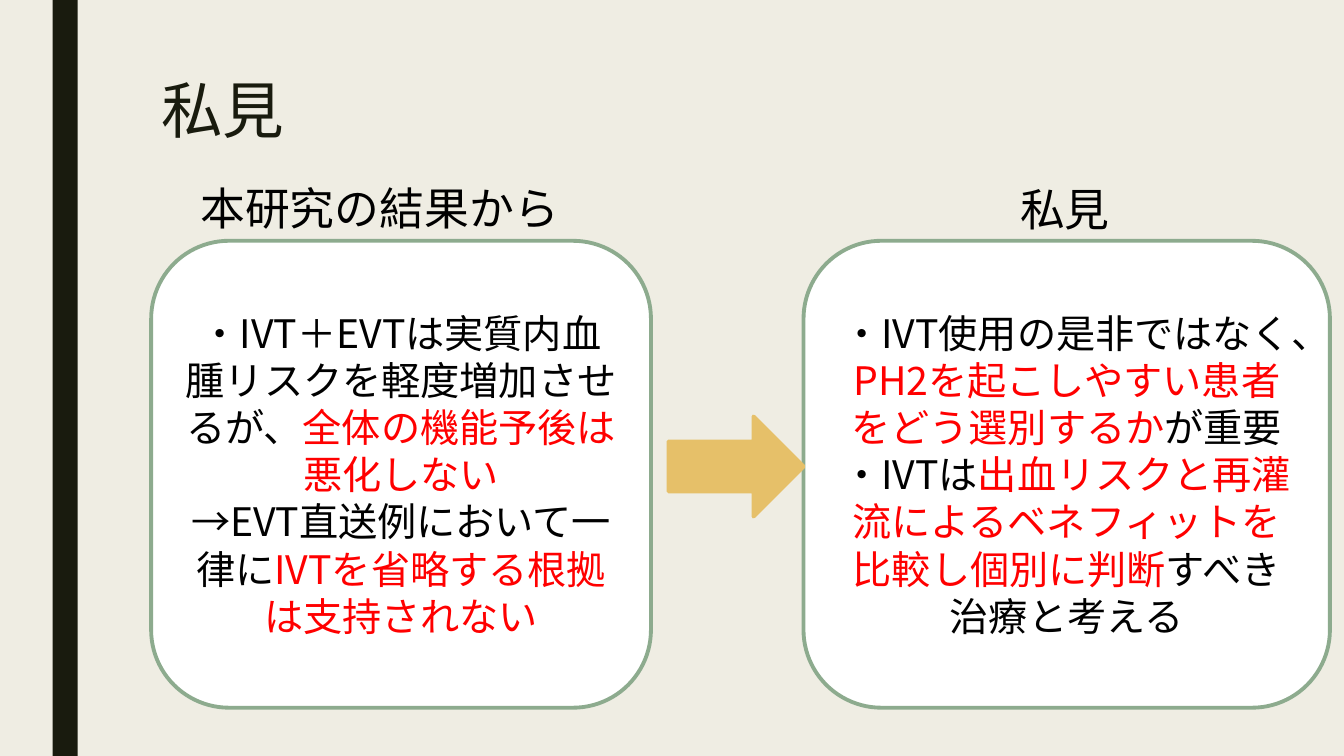
from lxml import etree
from pptx import Presentation
from pptx.dml.color import RGBColor
from pptx.enum.shapes import MSO_SHAPE
from pptx.enum.text import MSO_ANCHOR, PP_ALIGN
from pptx.oxml.ns import qn
from pptx.util import Pt

RECTANGLE = MSO_SHAPE.RECTANGLE
ROUNDED = MSO_SHAPE.ROUNDED_RECTANGLE
RIGHT_ARROW = MSO_SHAPE.RIGHT_ARROW
CENTER = PP_ALIGN.CENTER
TOP, MIDDLE = MSO_ANCHOR.TOP, MSO_ANCHOR.MIDDLE

SLIDE_WIDTH, SLIDE_HEIGHT = 960, 540
HEADING_FONT, BODY_FONT = "Karla", "Noto Sans CJK JP"
CREAM, INK, WHITE, BLACK = "EFEDE3", "191B0E", "FFFFFF", "000000"
RED, GREEN, GOLD = "FF0000", "8DAB8E", "E6C069"

# Each paragraph is a list of (text, colour) pieces
FINDINGS = [
    [("・IVT＋EVTは実質内血腫リスクを軽度増加させるが、", BLACK),
     ("全体の機能予後は悪化しない", RED)],
    [("→EVT直送例において一律に", BLACK),
     ("IVTを省略する根拠は支持されない", RED)],
]
OPINIONS = [
    [("・IVT使用の是非ではなく、", BLACK),
     ("PH2を起こしやすい患者をどう選別するか", RED),
     ("が重要", BLACK)],
    [("・IVTは", BLACK),
     ("出血リスクと再灌流によるベネフィットを比較し個別に判断", RED),
     ("すべき治療と考える", BLACK)],
]


def color(hex_code):
    return RGBColor.from_string(hex_code)


def style_run(run, size, font_name, hex_code):
    run.font.size = Pt(size)
    run.font.color.rgb = color(hex_code)
    run.font.name = font_name
    # East Asian typeface, placed right after the Latin one
    east_asian = etree.Element(qn("a:ea"), typeface=BODY_FONT)
    run.font._element.find(qn("a:latin")).addnext(east_asian)


def add_block(slide, preset, box, fill, line=None):
    block = slide.shapes.add_shape(preset, *map(Pt, box))
    block.shadow.inherit = False
    block.fill.solid()
    block.fill.fore_color.rgb = color(fill)
    if line:
        block.line.color.rgb = color(line)
        block.line.width = Pt(2.75)
    else:
        block.line.fill.background()
    return block


def add_heading(slide, box, text, size, hex_code, wrap=True):
    frame = slide.shapes.add_textbox(*map(Pt, box)).text_frame
    frame.word_wrap = wrap
    frame.vertical_anchor = TOP
    frame.text = text
    paragraph = frame.paragraphs[0]
    style_run(paragraph.runs[0], size, HEADING_FONT, hex_code)
    return paragraph


def add_title(slide, box, text):
    add_heading(slide, box, text, 44, INK).line_spacing = 0.89


def add_panel(slide, box, heading, heading_box, paragraphs, wrap_heading=True):
    """Rounded panel; heading_box is given relative to the panel's corner."""
    left, top = box[:2]
    dx, dy, width, height = heading_box

    # Panel body
    frame = add_block(slide, ROUNDED, box, WHITE, GREEN).text_frame
    frame.word_wrap = True
    frame.vertical_anchor = MIDDLE
    for index, pieces in enumerate(paragraphs):
        paragraph = frame.add_paragraph() if index else frame.paragraphs[0]
        paragraph.alignment = CENTER
        for text, hex_code in pieces:
            run = paragraph.add_run()
            run.text = text
            style_run(run, 28, BODY_FONT, hex_code)

    # Heading above the panel
    add_heading(slide, (left + dx, top + dy, width, height), heading, 32,
                BLACK, wrap_heading)


def main():
    prs = Presentation()
    prs.slide_width, prs.slide_height = Pt(SLIDE_WIDTH), Pt(SLIDE_HEIGHT)
    slide = prs.slides.add_slide(prs.slide_layouts[6])

    # Background and side bar
    slide.background.fill.solid()
    slide.background.fill.fore_color.rgb = color(CREAM)
    add_block(slide, RECTANGLE, (37.5, 0, 18, SLIDE_HEIGHT), INK)

    add_title(slide, (108, 54, 756, 116.5), "私見")

    # Results, arrow, opinion
    panel_top, panel_height = 172, 333.5
    add_panel(slide, (108, panel_top, 357, panel_height), "本研究の結果から",
              (28, -46.5, 305, 46), FINDINGS)
    add_panel(slide, (574, panel_top, 376, panel_height), "私見",
              (147.5, -46, 79, 46), OPINIONS, wrap_heading=False)
    add_block(slide, RIGHT_ARROW, (477.5, 297.5, 96.5, 71.5), GOLD, GOLD)

    prs.save("out.pptx")


if __name__ == "__main__":
    main()
